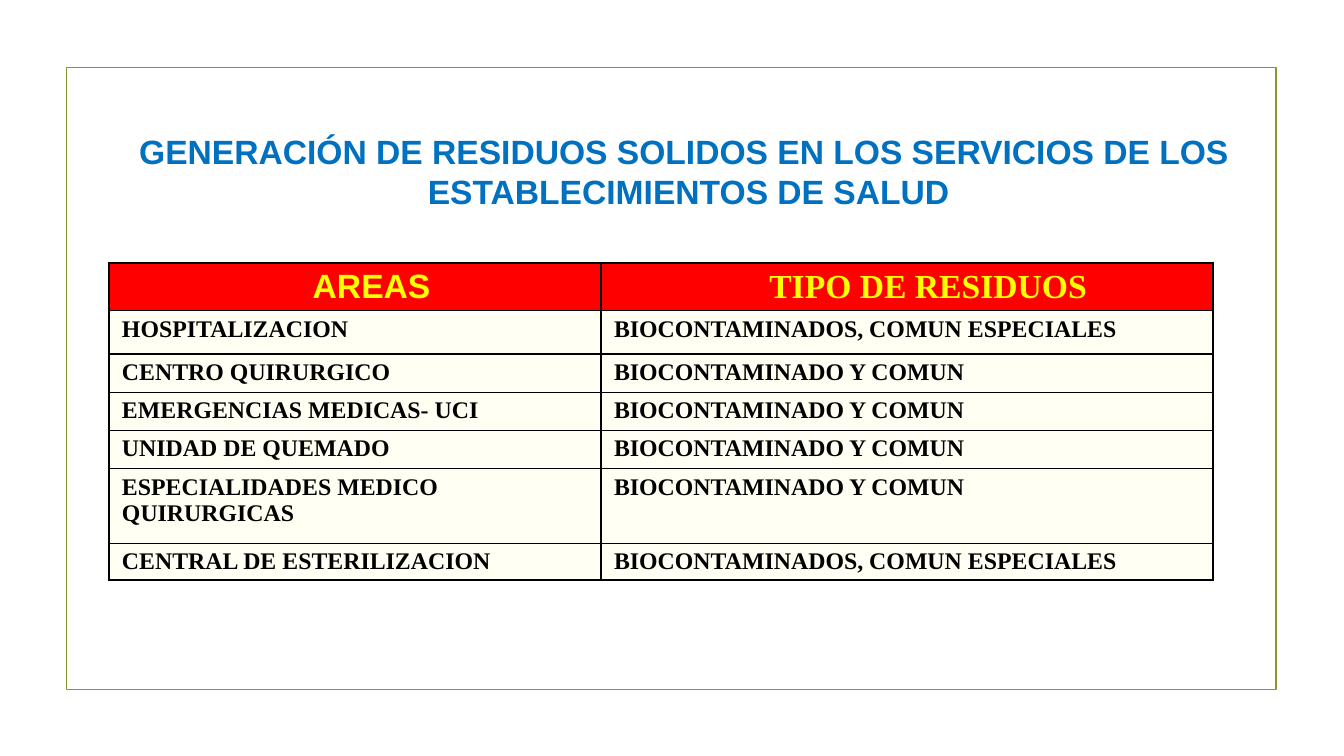
from dataclasses import dataclass

from lxml import etree
from pptx import Presentation
from pptx.dml.color import RGBColor
from pptx.enum.shapes import MSO_SHAPE
from pptx.enum.text import MSO_AUTO_SIZE, PP_ALIGN
from pptx.oxml.ns import qn
from pptx.slide import Slide
from pptx.table import _Cell
from pptx.text.text import _Paragraph
from pptx.util import Inches, Pt

RECTANGLE = MSO_SHAPE.RECTANGLE
LEFT, CENTER = PP_ALIGN.LEFT, PP_ALIGN.CENTER
SERIF, SANS = "Times New Roman", "Arial"
BLACK, RED, YELLOW, IVORY = "000000", "FF0000", "FFFF00", "FFFFF3"
BLUE, OLIVE = "0070C0", "83992A"
THIN, THICK = 1, 2.25


@dataclass
class CellStyle:
    fill: str
    color: str
    size: float
    align: PP_ALIGN
    font: str = SERIF
    left_inset: float = 0.13


@dataclass
class WasteRow:
    area: str
    waste: str
    height: float


BODY = CellStyle(IVORY, BLACK, 17, LEFT)
# The wider left insets shift the centred headings to the right.
HEADINGS = (
    CellStyle(RED, YELLOW, 24, CENTER, SANS, 0.46),
    CellStyle(RED, YELLOW, 24, CENTER, SERIF, 0.55),
)
TWO_TYPES = "BIOCONTAMINADO Y COMUN"
ALL_TYPES = "BIOCONTAMINADOS, COMUN ESPECIALES"
WASTE_ROWS = [
    WasteRow("AREAS", "TIPO DE RESIDUOS", 0.46),
    WasteRow("HOSPITALIZACION", ALL_TYPES, 0.43),
    WasteRow("CENTRO QUIRURGICO", TWO_TYPES, 0.38),
    WasteRow("EMERGENCIAS MEDICAS- UCI", TWO_TYPES, 0.38),
    WasteRow("UNIDAD DE QUEMADO", TWO_TYPES, 0.38),
    WasteRow("ESPECIALIDADES MEDICO QUIRURGICAS", TWO_TYPES, 0.74),
    WasteRow("CENTRAL DE ESTERILIZACION", ALL_TYPES, 0.35),
]
COLUMN_WIDTHS = (4.88, 6.07)


def rgb(value: str) -> RGBColor:
    return RGBColor.from_string(value)


def format_paragraph(paragraph: _Paragraph, font: str, size: float,
                     color: str, align: PP_ALIGN) -> None:
    paragraph.alignment = align
    for run in paragraph.runs:
        run.font.name = font
        run.font.size = Pt(size)
        run.font.bold = True
        run.font.color.rgb = rgb(color)


def set_borders(cell: _Cell, widths: dict[str, float]) -> None:
    """Put the border lines ahead of the cell's fill, as the schema requires."""
    properties = cell._tc.get_or_add_tcPr()
    for position, (side, width) in enumerate(widths.items()):
        line = etree.Element(qn(f"a:ln{side}"), w=str(Pt(width)))
        fill = etree.SubElement(line, qn("a:solidFill"))
        etree.SubElement(fill, qn("a:srgbClr"), val=BLACK)
        properties.insert(position, line)


def fill_cell(cell: _Cell, text: str, style: CellStyle) -> None:
    cell.fill.solid()
    cell.fill.fore_color.rgb = rgb(style.fill)
    cell.margin_left = Inches(style.left_inset)
    cell.margin_right = Inches(0.13)
    cell.margin_top = cell.margin_bottom = Inches(0.05)
    cell.text_frame.text = text
    format_paragraph(cell.text_frame.paragraphs[0], style.font, style.size,
                     style.color, style.align)


def add_frame(slide: Slide) -> None:
    frame = slide.shapes.add_shape(
        RECTANGLE, Inches(0.66), Inches(0.67), Inches(12), Inches(6.17))
    frame.shadow.inherit = False
    frame.fill.background()
    frame.line.color.rgb = rgb(OLIVE)
    frame.line.width = Pt(1.25)


def add_waste_table(slide: Slide) -> None:
    last_row, last_column = len(WASTE_ROWS) - 1, len(COLUMN_WIDTHS) - 1
    table = slide.shapes.add_table(
        len(WASTE_ROWS), len(COLUMN_WIDTHS), Inches(1.08), Inches(2.61),
        Inches(sum(COLUMN_WIDTHS)),
        Inches(sum(row.height for row in WASTE_ROWS))).table
    for column, width in zip(table.columns, COLUMN_WIDTHS):
        column.width = Inches(width)
    for r, row in enumerate(WASTE_ROWS):
        table.rows[r].height = Inches(row.height)
        for c, text in enumerate((row.area, row.waste)):
            cell = table.cell(r, c)
            fill_cell(cell, text, HEADINGS[c] if r == 0 else BODY)
            set_borders(cell, {
                "L": THICK if c == 0 else THIN,
                "R": THICK if c == last_column else THIN,
                "T": THICK if r == 0 else THIN,
                "B": THICK if r == last_row else THIN,
            })


def add_title(slide: Slide) -> None:
    title = slide.shapes.add_textbox(
        Inches(1.23), Inches(1.25), Inches(11.11), Inches(0.91)).text_frame
    title.word_wrap = False
    title.auto_size = MSO_AUTO_SIZE.SHAPE_TO_FIT_TEXT
    title.text = ("GENERACIÓN DE RESIDUOS SOLIDOS EN LOS SERVICIOS DE LOS\n"
                  "ESTABLECIMIENTOS DE SALUD")
    for paragraph in title.paragraphs:
        format_paragraph(paragraph, SANS, 24, BLUE, CENTER)
    second_line = title.paragraphs[1]
    second_line._p.get_or_add_pPr().set("marL", str(Inches(0.09)))


def main() -> None:
    presentation = Presentation()
    presentation.slide_width = Inches(13.33)
    presentation.slide_height = Inches(7.5)
    slide = presentation.slides.add_slide(presentation.slide_layouts[6])
    add_frame(slide)
    add_waste_table(slide)
    add_title(slide)
    presentation.save("out.pptx")


if __name__ == "__main__":
    main()
